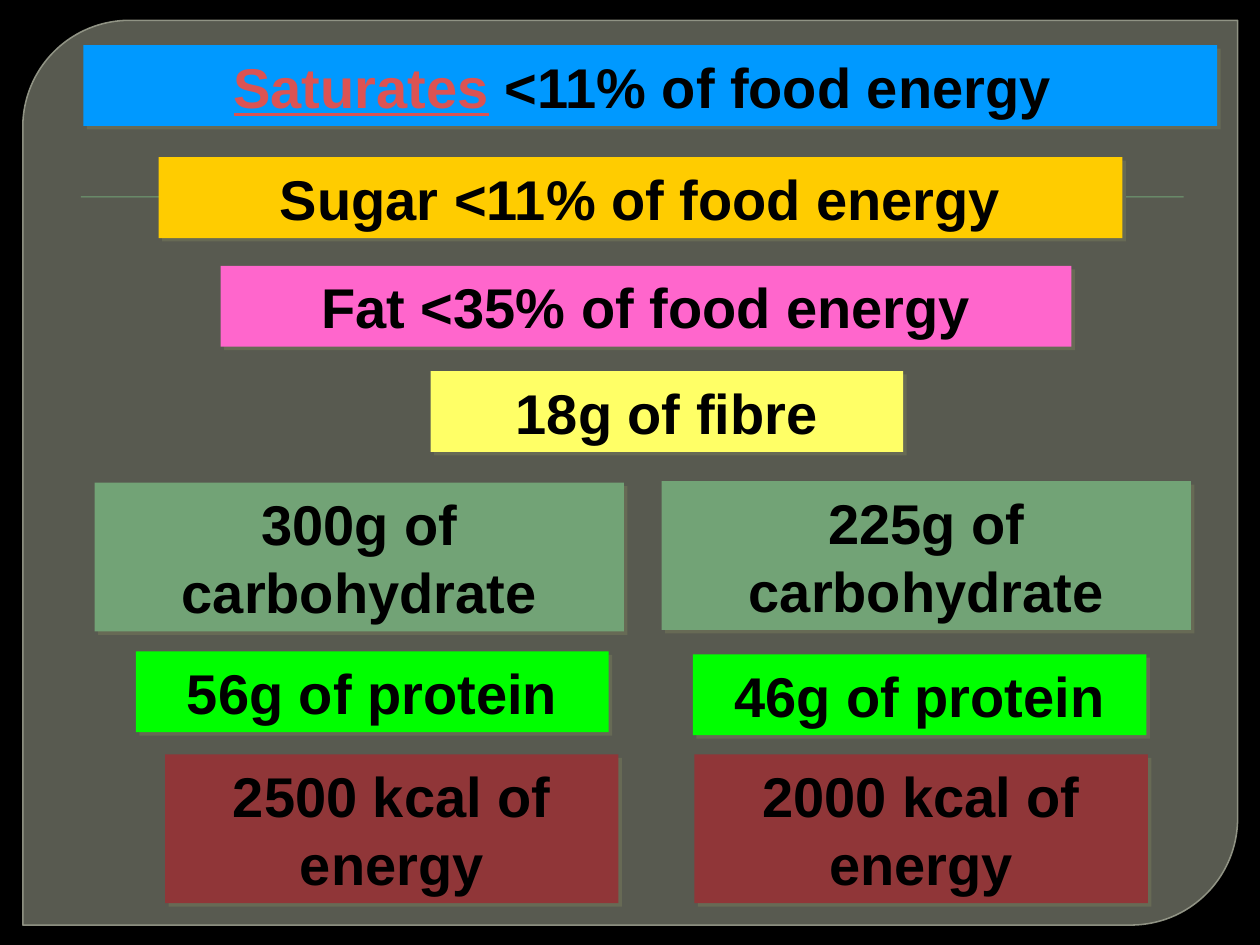
from dataclasses import dataclass

from lxml import etree
from pptx import Presentation
from pptx.dml.color import RGBColor
from pptx.enum import shapes, text
from pptx.oxml import ns
from pptx.util import Cm, Pt


@dataclass(frozen=True)
class Theme:
    font: str = "Arial"
    size: float = 32
    pitch: float = 38.9
    ink: str = "000000"
    link: str = "DB5353"
    back: str = "000000"
    panel: str = "888B7B"
    edge: str = "9DA090"
    shade: str = "676A55"
    sage: str = "72A376"
    red: str = "903638"
    green: str = "00FF00"
    yellow: str = "FFFF66"
    pink: str = "FF66CC"
    gold: str = "FFCC00"
    blue: str = "0099FF"


T = Theme()
ONE, TWO = 1.63, 3.0  # heights of one-line and two-line boxes, in cm


def rgb(code):
    return RGBColor.from_string(code)


def add_alpha(fill, share):
    """Make a solid fill element partly opaque, share in percent."""
    node = fill.find(ns.qn("a:srgbClr"))
    etree.SubElement(node, ns.qn("a:alpha"), val=str(share * 1000))


def add_shade(shape, code, alpha, blur, dist, angle):
    shape.shadow.inherit = False
    effects = shape.element.spPr.find(ns.qn("a:effectLst"))
    outer = etree.SubElement(
        effects, ns.qn("a:outerShdw"), blurRad=str(Pt(blur)),
        dist=str(Pt(dist)), dir=str(angle * 60000), algn="ctr",
        rotWithShape="0")
    color = etree.SubElement(outer, ns.qn("a:srgbClr"), val=code)
    etree.SubElement(color, ns.qn("a:alpha"), val=str(alpha * 1000))


def add_block(slide, kind, place, fill):
    shape = slide.shapes.add_shape(kind, *(Cm(n) for n in place))
    shape.shadow.inherit = False
    shape.fill.solid()
    shape.fill.fore_color.rgb = rgb(fill)
    shape.line.fill.background()
    return shape


def add_panel(slide):
    panel = add_block(slide, shapes.MSO_SHAPE.ROUND_2_DIAG_RECTANGLE,
                      (0.46, 0.41, 24.49, 18.24), T.panel)
    panel.adjustments[0] = 0.118
    panel.adjustments[1] = 0
    panel.line.color.rgb = rgb(T.edge)
    panel.line.width = Pt(0.87)
    props = panel.element.spPr
    add_alpha(props.find(ns.qn("a:solidFill")), 65)
    add_alpha(props.find(ns.qn("a:ln")).find(ns.qn("a:solidFill")), 88)


def add_rule(slide):
    rule = add_block(slide, shapes.MSO_SHAPE.RECTANGLE,
                     (1.63, 3.96, 22.23, 0.02), T.sage)
    add_shade(rule, T.back, 75, 1, 1, 90)


def add_label(slide, place, fill, *runs):
    """Add a shaded box; each run is a pair of words and colour."""
    box = add_block(slide, shapes.MSO_SHAPE.RECTANGLE, place, fill)
    add_shade(box, T.shade, 100, 0, 2.8, 45)
    frame = box.text_frame
    frame.word_wrap = True
    frame.auto_size = text.MSO_AUTO_SIZE.SHAPE_TO_FIT_TEXT
    frame.vertical_anchor = text.MSO_ANCHOR.TOP
    para = frame.paragraphs[0]
    para.alignment = text.PP_ALIGN.CENTER
    para.line_spacing = Pt(T.pitch)
    for words, color in runs:
        run = para.add_run()
        run.text = words
        font = run.font
        font.name, font.size, font.bold = T.font, Pt(T.size), True
        font.color.rgb = rgb(color)
        font.underline = color == T.link


def main():
    deck = Presentation()
    deck.slide_width, deck.slide_height = Cm(25.4), Cm(19.05)
    slide = deck.slides.add_slide(deck.slide_layouts[6])
    slide.background.fill.solid()
    slide.background.fill.fore_color.rgb = rgb(T.back)
    add_panel(slide)
    add_rule(slide)

    labels = [
        ((3.33, 15.21, 9.14, TWO), T.red, "2500 kcal of energy"),
        ((14, 15.21, 9.14, TWO), T.red, "2000 kcal of energy"),
        ((2.74, 13.13, 9.53, ONE), T.green, "56g of protein"),
        ((13.97, 13.19, 9.14, ONE), T.green, "46g of protein"),
        ((1.91, 9.73, 10.67, TWO), T.sage, "300g of carbohydrate"),
        ((13.34, 9.7, 10.67, TWO), T.sage, "225g of carbohydrate"),
        ((8.68, 7.48, 9.53, ONE), T.yellow, "18g of fibre"),
        ((4.45, 5.36, 17.15, ONE), T.pink, "Fat <35% of food energy"),
        ((3.2, 3.17, 19.43, ONE), T.gold, "Sugar <11% of food energy"),
    ]
    for place, fill, words in labels:
        add_label(slide, place, fill, (words, T.ink))
    add_label(slide, (1.68, 0.91, 22.86, ONE), T.blue,
              ("Saturates", T.link), (" <11% of food energy ", T.ink))
    deck.save("out.pptx")


if __name__ == "__main__":
    main()
